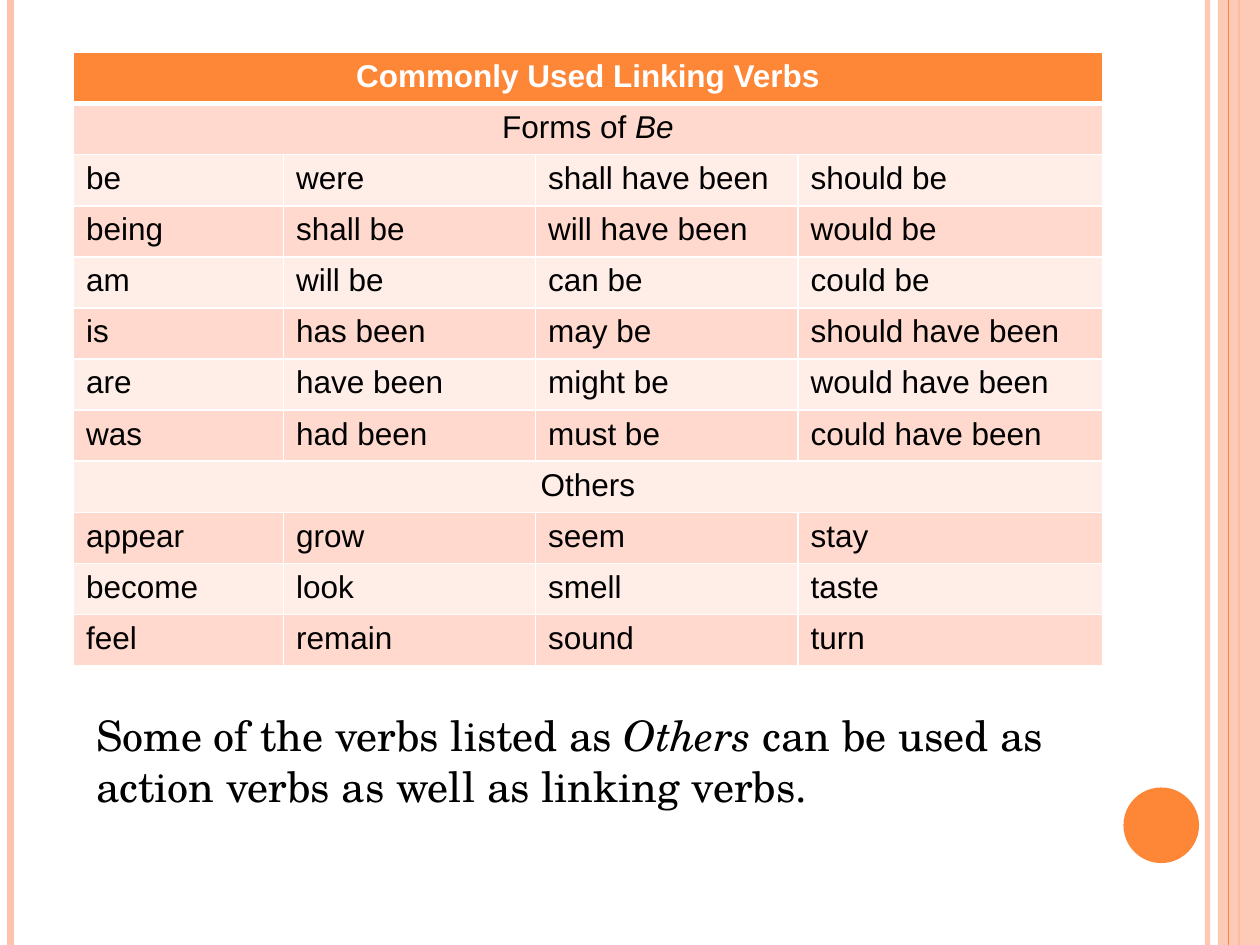
from lxml import etree
from pptx import Presentation
from pptx.dml.color import RGBColor
from pptx.enum.shapes import MSO_CONNECTOR, MSO_SHAPE
from pptx.enum.text import MSO_AUTO_SIZE, PP_ALIGN
from pptx.oxml.ns import qn
from pptx.util import Pt

STRAIGHT = MSO_CONNECTOR.STRAIGHT
RECT, OVAL = MSO_SHAPE.RECTANGLE, MSO_SHAPE.OVAL
LEFT, CENTER = PP_ALIGN.LEFT, PP_ALIGN.CENTER
FIT_SHAPE = MSO_AUTO_SIZE.SHAPE_TO_FIT_TEXT

ORANGE = RGBColor(0xFE, 0x86, 0x37)
PEACH = RGBColor(0xFE, 0xC3, 0xAE)
BAND_DARK = RGBColor(0xFF, 0xD9, 0xCE)
BAND_LIGHT = RGBColor(0xFF, 0xED, 0xE8)
WHITE = RGBColor(0xFF, 0xFF, 0xFF)
BLACK = RGBColor(0, 0, 0)

COL_WIDTHS = [120, 144, 150, 174]
VERB_ROWS = [
    ["Commonly Used Linking Verbs"],
    ["Forms of *Be*"],
    ["be", "were", "shall have been", "should be"],
    ["being", "shall be", "will have been", "would be"],
    ["am", "will be", "can be", "could be"],
    ["is", "has been", "may be", "should have been"],
    ["are", "have been", "might be", "would have been"],
    ["was", "had been", "must be", "could have been"],
    ["Others"],
    ["appear", "grow", "seem", "stay"],
    ["become", "look", "smell", "taste"],
    ["feel", "remain", "sound", "turn"],
]
NOTE = ("Some of the verbs listed as *Others* can be used as "
        "action verbs as well as linking verbs.")


def write_text(tf, text, font="Arial", size=18, color=BLACK, bold=False, align=LEFT):
    p = tf.paragraphs[0]
    p.alignment = align
    for i, part in enumerate(text.split("*")):
        if part:
            r = p.add_run()
            r.text = part
            r.font.name = font
            r.font.size = Pt(size)
            r.font.bold = bold
            r.font.italic = i % 2 == 1
            r.font.color.rgb = color


def set_opacity(parent, percent):
    color = parent.find(".//" + qn("a:srgbClr"))
    etree.SubElement(color, qn("a:alpha"), val=str(percent * 1000))


def add_stripe(s, x, top, height, color, width, opacity=100):
    line = s.shapes.add_connector(STRAIGHT, Pt(x), Pt(top), Pt(x), Pt(top + height))
    line.line.color.rgb = color
    line.line.width = Pt(width)
    sp_pr = line._element.spPr
    etree.SubElement(sp_pr, qn("a:effectLst"))
    if opacity < 100:
        set_opacity(sp_pr, opacity)


def add_solid(s, kind, left, top, width, height, color):
    sp = s.shapes.add_shape(kind, Pt(left), Pt(top), Pt(width), Pt(height))
    sp.shadow.inherit = False
    sp.fill.solid()
    sp.fill.fore_color.rgb = color
    sp.line.fill.background()
    return sp


def add_frame(s, left, top, width, height):
    right = left + width
    add_stripe(s, right - 30, top, height, PEACH, 3, opacity=93)
    add_stripe(s, left + 6, top, height, PEACH, 4.5)
    add_stripe(s, right - 12, top, height, ORANGE, 1.5)
    band = add_solid(s, RECT, right - 24, top, 24, height, PEACH)
    set_opacity(band._element.spPr, 87)
    add_stripe(s, right - 18, top, height, ORANGE, 0.75)
    add_solid(s, OVAL, right - 78, top + height - 90, 43.2, 43.2, ORANGE)


def set_borders(cell, widths):
    tc_pr = cell._tc.get_or_add_tcPr()
    for i, (side, width) in enumerate(widths.items()):
        ln = etree.Element(qn("a:ln" + side), w=str(Pt(width)))
        fill = etree.SubElement(ln, qn("a:solidFill"))
        etree.SubElement(fill, qn("a:srgbClr"), val=str(WHITE))
        tc_pr.insert(i, ln)


def add_verb_table(s, left, top, width, height):
    rows, cols = len(VERB_ROWS), len(COL_WIDTHS)
    table = s.shapes.add_table(rows, cols, Pt(left), Pt(top), Pt(width), Pt(height)).table
    for col, col_width in zip(table.columns, COL_WIDTHS):
        col.width = Pt(col_width)
    for i, words in enumerate(VERB_ROWS):
        table.rows[i].height = Pt(height / rows)
        header, spans = i == 0, len(words) == 1
        if header:
            fill = ORANGE
        else:
            fill = BAND_DARK if i % 2 else BAND_LIGHT
        for j in range(cols):
            cell = table.cell(i, j)
            cell.fill.solid()
            cell.fill.fore_color.rgb = fill
            set_borders(cell, {"L": 1, "R": 1, "T": 3 if i == 1 else 1,
                               "B": 3 if header else 1})
        if spans:
            table.cell(i, 0).merge(table.cell(i, cols - 1))
        for j, word in enumerate(words):
            write_text(table.cell(i, j).text_frame, word, bold=header,
                       color=WHITE if header else BLACK,
                       align=CENTER if spans else LEFT)


def add_note(s, left, top, width, height):
    tf = s.shapes.add_textbox(Pt(left), Pt(top), Pt(width), Pt(height)).text_frame
    tf.word_wrap = True
    tf.auto_size = FIT_SHAPE
    write_text(tf, NOTE, font="TeX Gyre Schola", size=24)


def main():
    prs = Presentation()
    prs.slide_width, prs.slide_height = Pt(720), Pt(540)
    s = prs.slides.add_slide(prs.slide_layouts[6])
    add_frame(s, 0, 0, 720, 540)
    add_verb_table(s, 42, 30, sum(COL_WIDTHS), 350.4)
    add_note(s, 48, 402, 564, 65.4)
    prs.save("out.pptx")


if __name__ == "__main__":
    main()
